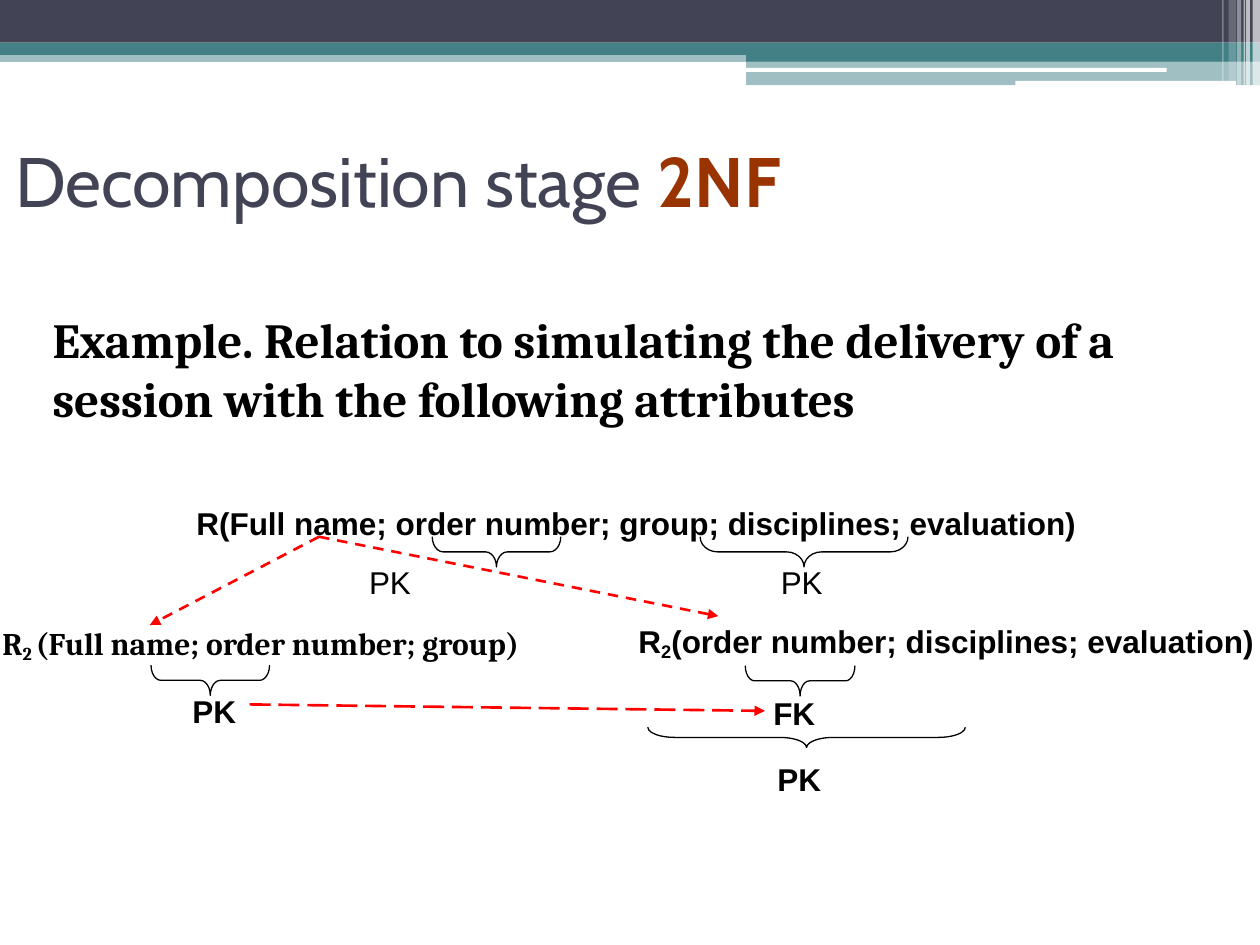
from lxml import etree
from pptx import Presentation
from pptx import util as u
from pptx.dml.color import RGBColor
from pptx.enum import dml, shapes, text
from pptx.oxml import ns

COLORS = {"ink": "000000", "navy": "424456", "teal": "438086",
          "white": "FFFFFF", "rust": "993300", "red": "FF0000"}
KIND = shapes.MSO_SHAPE


def color(name):
    """Return the palette colour with this name."""
    return RGBColor.from_string(COLORS[name])


def add_child(parent, tag, **attributes):
    """Append an XML element with the given attributes."""
    return etree.SubElement(parent, ns.qn(tag), attributes)


def set_values(target, **values):
    """Set several attributes on one object."""
    for name, value in values.items():
        setattr(target, name, value)


def add_span(para, wording, ink="ink", baseline=0, **values):
    """Append a formatted run to a paragraph."""
    span = para.add_run()
    span.text = wording
    set_values(span.font, **values)
    span.font.color.rgb = color(ink)
    if baseline:
        span.font._element.set("baseline", str(baseline * 1000))


def add_text(page, left, top, width, height, pieces, wrap=True, **values):
    """Add a text box whose odd pieces are subscripts."""
    box = page.shapes.add_textbox(*map(u.Cm, (left, top, width, height)))
    box.text_frame.word_wrap = wrap
    for index, wording in enumerate(pieces):
        add_span(box.text_frame.paragraphs[0], wording,
                 baseline=-16 if index % 2 else 0, **values)


def add_bar(page, left, top, width, height, ink, opacity=100, kind=KIND.RECTANGLE):
    """Add a borderless bar with optional transparency."""
    bar = page.shapes.add_shape(kind, *map(u.Cm, (left, top, width, height)))
    bar.shadow.inherit = False
    bar.fill.solid()
    bar.fill.fore_color.rgb = color(ink)
    bar.line.fill.background()
    if opacity < 100:
        tint = bar._element.spPr.find(".//" + ns.qn("a:srgbClr"))
        add_child(tint, "a:alpha", val=str(opacity * 1000))


def add_brace(page, center, top, width, depth, curve):
    """Add a brace that lies under a span of text and points down."""
    brace = page.shapes.add_shape(
        KIND.LEFT_BRACE, u.Cm(center - depth / 2), u.Cm(top + (depth - width) / 2),
        u.Cm(depth), u.Cm(width))
    brace.rotation = 270
    brace.adjustments[0] = curve
    brace.shadow.inherit = False
    brace.fill.background()
    brace.line.color.rgb = color("ink")
    brace.line.width = u.Pt(0.75)


def add_arrow(page, start, end, dash):
    """Add a dashed red arrow."""
    arrow = page.shapes.add_connector(
        shapes.MSO_CONNECTOR.STRAIGHT, *map(u.Cm, (*start, *end)))
    set_values(arrow.line, width=u.Pt(1.5), dash_style=dash)
    arrow.line.color.rgb = color("red")
    add_child(arrow.line._ln, "a:tailEnd", type="triangle")
    add_child(arrow._element.spPr, "a:effectLst")


def build_header(page, left, top, width):
    """Draw the layered band across the top of the page."""
    split = 15.04
    wide = width - split
    for x, y, w, h, *style in [
            (0, 1.02, width, 0.23, "teal", 50),
            (0, 0, width, 0.86, "navy"),
            (0, 0.86, width, 0.25, "teal"),
            (split, 0.99, wide, 0.25, "teal"),
            (split, 1.22, wide, 0.5, "teal", 50),
            (15.01, 1.37, 8.51, 0.08, "white", 100, KIND.ROUNDED_RECTANGLE),
            (20.47, 1.63, 4.45, 0.1, "white", 100, KIND.ROUNDED_RECTANGLE)]:
        add_bar(page, left + x, top + y, w, h, *style)
    for x, w, h, opacity in [
            (25.25, 0.15, 1.73, 65), (25.12, 0.08, 1.73, 65),
            (25.07, 0.03, 1.73, 60), (24.94, 0.08, 1.73, 40),
            (24.77, 0.15, 1.63, 20), (24.64, 0.03, 1.63, 30)]:
        add_bar(page, left + x, top, w, h, "white", opacity)


def build_title(page, left, top, width, height):
    """Place and format the title placeholder."""
    title = page.shapes.title
    set_values(title, left=u.Cm(left), top=u.Cm(top),
               width=u.Cm(width), height=u.Cm(height))
    set_values(title.text_frame, vertical_anchor=text.MSO_ANCHOR.MIDDLE,
               word_wrap=True)
    para = title.text_frame.paragraphs[0]
    para.alignment = text.PP_ALIGN.LEFT
    font = {"name": "Cabin", "size": u.Pt(40)}
    add_span(para, "Decomposition stage ", "navy", **font)
    add_span(para, "2NF", "rust", bold=True, **font)


def build_relation(page, left, top, width, pieces, braces, keys,
                   face="Arial", wrap=True, bold_keys=True):
    """Draw a relation with its braces and key labels below."""
    size = u.Pt(18)
    add_text(page, left, top, width, 1.02, pieces, wrap,
             name=face, size=size, bold=True)
    for center, y, *shape in braces:
        add_brace(page, left + center, top + y, *shape)
    for x, y, wording in keys:
        add_text(page, left + x, top + y, 1.6, 1.02, [wording],
                 name="Arial", size=size, bold=bold_keys)


def build_arrows(page, left, top):
    """Link the source relation to its parts, and the key to its reference."""
    dashes = dml.MSO_LINE
    for start, end, dash in [
            ((5.03, 3.38), (15.42, 3.51), dashes.LONG_DASH),
            ((6.43, 0), (3.02, 1.78), dashes.DASH),
            ((6.43, 0), (14.48, 1.6), dashes.DASH)]:
        add_arrow(page, *[(left + x, top + y) for x, y in (start, end)], dash)


def main():
    """Build the deck and save it."""
    deck = Presentation()
    set_values(deck, slide_width=u.Cm(25.4), slide_height=u.Cm(19.05))
    page = deck.slides.add_slide(deck.slide_layouts[5])
    build_header(page, 0, 0, 25.4)
    build_title(page, 0.05, 2.13, 22.86, 2.97)
    add_text(page, 0.81, 6.12, 23.29, 2.64,
             ["Example. Relation to simulating the delivery of a session "
              "with the following attributes"],
             name="Cambria", size=u.Pt(28), bold=True)
    build_relation(
        page, 3.71, 10.03, 18.8,
        ["R(Full name; order number; group; disciplines; evaluation)"],
        [(6.3, 0.79, 2.59, 0.61, 0.36), (12.5, 0.79, 4.19, 0.61, 0.58)],
        [(3.48, 1.2, "PK"), (11.78, 1.2, "PK")], bold_keys=False)
    build_relation(
        page, -0.2, 12.45, 12.78,
        ["R", "2 ", "(Full name; order number; group)"],
        [(4.44, 0.96, 2.39, 0.61, 0.33)],
        [(3.83, 1.37, "PK")], face="Cambria", wrap=False)
    build_relation(
        page, 12.62, 12.42, 13.67,
        ["R", "2", "(order number; disciplines; evaluation)"],
        [(3.51, 1, 2.21, 0.61, 0.31), (3.64, 2.24, 6.4, 0.41, 1.33)],
        [(2.72, 1.45, "FK"), (2.8, 2.77, "PK")])
    build_arrows(page, 0, 10.82)
    deck.save("out.pptx")


if __name__ == "__main__":
    main()
